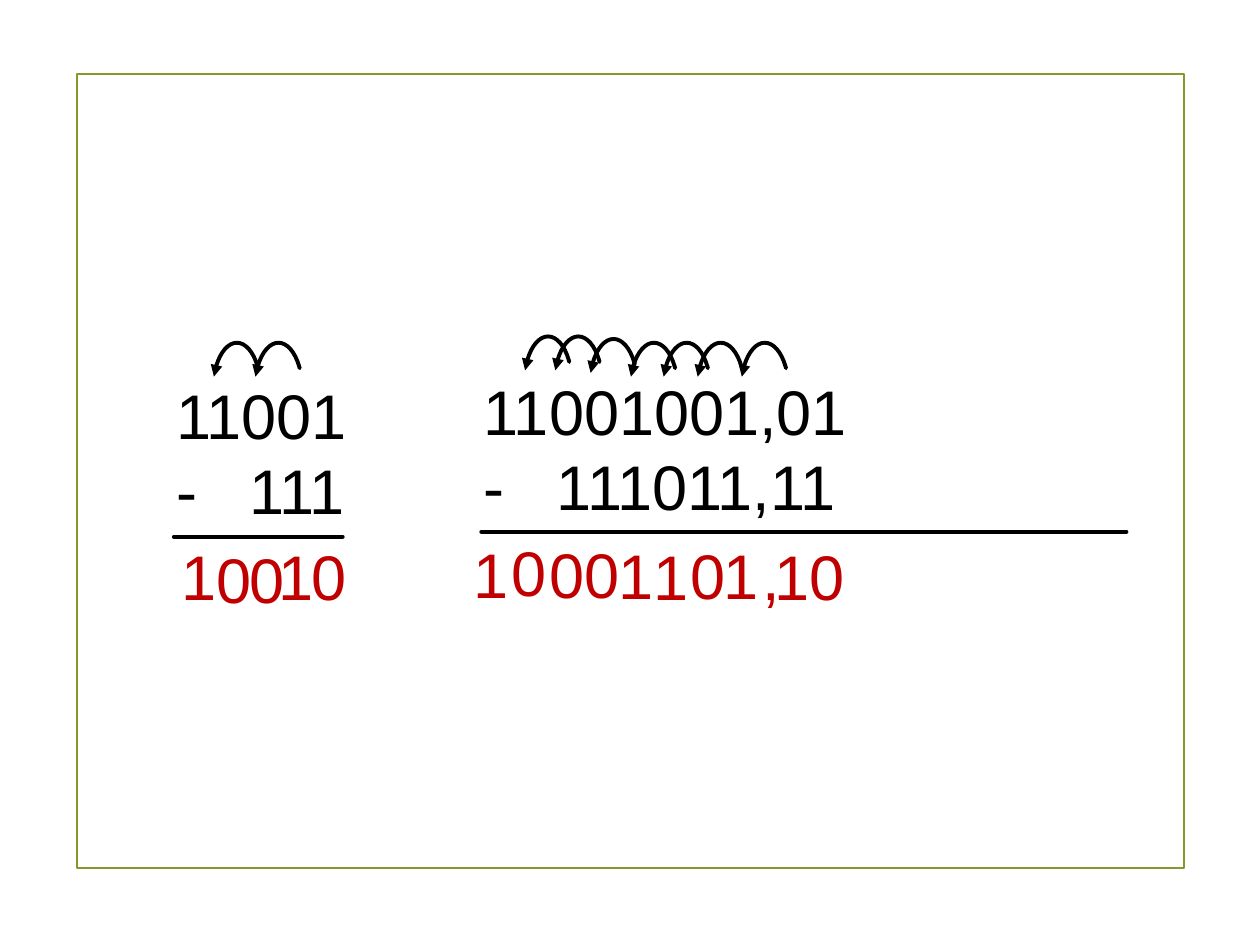
from lxml import etree
from pptx import Presentation
from pptx import util as u
from pptx.dml import color
from pptx.enum import shapes, text
from pptx.oxml import ns

INK, RED, OLIVE = "000000", "C00000", "83992A"
SUMS = [
    dict(rows=["11001", "-\t111"], box=(1.3, 2.94, 1.57, 1.31),
         rule=(1.38, 2.72, 4.26),
         arcs=[(2.02, 2.72), (1.69, 2.72)],
         digits="01001",
         spots=[(2.37, 4.22), (2.11, 4.22), (1.88, 4.24), (1.62, 4.24),
                (1.34, 4.22)]),
    dict(rows=["11001001,01", "-\t111011,11"], box=(3.74, 2.91, 5.2, 1.31),
         rule=(3.82, 8.94, 4.22),
         arcs=[(5.88, 2.72), (5.53, 2.72), (5.26, 2.72), (5, 2.72),
               (4.68, 2.69), (4.4, 2.67), (4.16, 2.67)],
         digits="0110110001,",
         spots=[(6.33, 4.22), (6.05, 4.22), (5.64, 4.21), (5.38, 4.21),
                (5.09, 4.22), (4.81, 4.21), (4.54, 4.2), (4.26, 4.2),
                (3.96, 4.19), (3.66, 4.2), (5.95, 4.22)]),
]


def rgb(code):
    return color.RGBColor.from_string(code)


def put(obj, vals):
    for key, val in vals.items():
        setattr(obj, key, val)


def sub(node, tag, **vals):
    return etree.SubElement(node, ns.qn(tag), vals)


class Board:
    """Hold the text and line style and the current slide."""

    font = dict(name="Arial", size=u.Pt(36))
    frame = dict(auto_size=text.MSO_AUTO_SIZE.NONE,
                 vertical_anchor=text.MSO_ANCHOR.TOP)

    def __init__(self, slide):
        self.slide = slide

    def stroke(self, line, tint, width):
        line.color.rgb = rgb(tint)
        line.width = u.Pt(width)

    def shape(self, kind, box, tint, width):
        item = self.slide.shapes.add_shape(kind, *map(u.Inches, box))
        item.shadow.inherit = False
        item.fill.background()
        self.stroke(item.line, tint, width)
        return item

    def arc(self, x, y):
        item = self.shape(shapes.MSO_SHAPE.ARC, (x, y, 0.38, 0.75), INK, 2.25)
        item.adjustments[0] = 126.06
        item.adjustments[1] = 188.59
        edge = item.line._get_or_add_ln()
        edge.set("cap", "rnd")
        sub(edge, "a:headEnd", type="triangle")

    def rule(self, left, right, y):
        ends = map(u.Inches, (left, y, right, y))
        item = self.slide.shapes.add_connector(
            shapes.MSO_CONNECTOR.STRAIGHT, *ends)
        self.stroke(item.line, INK, 2.25)
        item.line._get_or_add_ln().set("cap", "rnd")
        sub(item._element.spPr, "a:effectLst")

    def text(self, rows, box, tint, wrap=False):
        item = self.slide.shapes.add_textbox(*map(u.Inches, box))
        body = item.text_frame
        put(body, dict(self.frame, word_wrap=wrap))
        for n, row in enumerate(rows):
            para = body.add_paragraph() if n else body.paragraphs[0]
            para.line_spacing = u.Pt(43)
            if "\t" in row:
                tabs = sub(para._p.get_or_add_pPr(), "a:tabLst")
                sub(tabs, "a:tab", pos=str(u.Inches(0.58)), algn="l")
            run = para.add_run()
            run.text = row
            put(run.font, self.font)
            run.font.color.rgb = rgb(tint)


def main():
    deck = Presentation()
    put(deck, dict(slide_width=u.Inches(10), slide_height=u.Inches(7.5)))
    board = Board(deck.slides.add_slide(deck.slide_layouts[6]))
    board.shape(shapes.MSO_SHAPE.RECTANGLE, (0.61, 0.59, 8.79, 6.3),
                OLIVE, 1.25)
    for task in SUMS:
        board.text(task["rows"], task["box"], INK, wrap=True)
        board.rule(*task["rule"])
        for spot in task["arcs"]:
            board.arc(*spot)
        for sign, (x, y) in zip(task["digits"], task["spots"]):
            wide = 0.34 if sign == "," else 0.48
            board.text([sign], (x, y, wide, 0.71), RED)
    deck.save("out.pptx")


if __name__ == "__main__":
    main()
